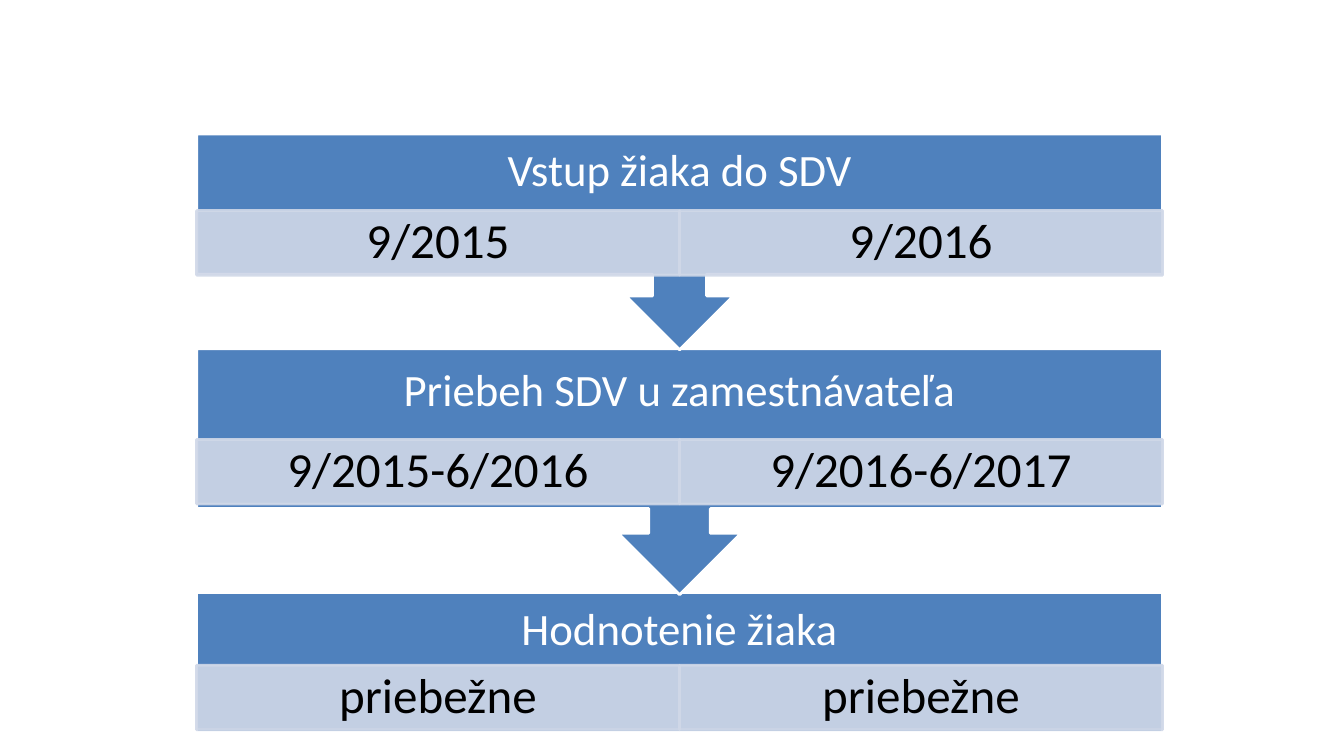
from lxml.etree import SubElement
from pptx import Presentation
from pptx.dml.color import RGBColor
from pptx.enum.shapes import MSO_SHAPE
from pptx.enum.text import MSO_ANCHOR, PP_ALIGN
from pptx.oxml.ns import qn
from pptx.util import Inches, Pt

COLORS = {"blue": "4F81BD", "pale": "D0D8E8", "white": "FFFFFF", "black": "000000"}
LEFT, WIDTH, CELL = 1.95, 9.58, 0.64

# Shape, top, height, heading height, cell top, heading, cell texts
STEPS = [
    (MSO_SHAPE.RECTANGLE, 5.88, 1.39, 0.75, 6.6,
     "Hodnotenie žiaka", ("priebežne", "priebežne")),
    (MSO_SHAPE.UP_ARROW_CALLOUT, 3.46, 2.44, 0.86, 4.36,
     "Priebeh SDV u zamestnávateľa", ("9/2015-6/2016", "9/2016-6/2017")),
    (MSO_SHAPE.UP_ARROW_CALLOUT, 1.33, 2.14, 0.75, 2.09,
     "Vstup žiaka do SDV", ("9/2015", "9/2016")),
]


class Board:
    font = "Calibri"
    head = {"size": 32, "color": "white", "side": 0.25, "edge": 0.25}
    body = {"size": 35, "color": "black", "side": 0.27, "edge": 0.05}

    def __init__(self, slide):
        self.slide = slide

    def paint(self, fill, name, alpha=None):
        fill.solid()
        fill.fore_color.rgb = RGBColor.from_string(COLORS[name])
        if alpha:
            for tone in fill._xPr.iter(qn("a:srgbClr")):
                SubElement(tone, qn("a:alpha"), val=str(alpha * 1000))

    def block(self, kind, box, fill, line, alpha=None):
        shape = self.slide.shapes.add_shape(kind, *map(Inches, box))
        shape.shadow.inherit = False
        self.paint(shape.line.fill, line, alpha)
        self.paint(shape.fill, fill, alpha)
        shape.line.width = Pt(2)
        return shape

    def text(self, shape, words, style):
        frame = shape.text_frame
        side, edge = Inches(style["side"]), Inches(style["edge"])
        form = {"word_wrap": True, "vertical_anchor": MSO_ANCHOR.MIDDLE,
                "margin_left": side, "margin_right": side,
                "margin_top": edge, "margin_bottom": edge}
        for key, value in form.items():
            setattr(frame, key, value)
        para = frame.paragraphs[0]
        para.alignment, para.line_spacing = PP_ALIGN.CENTER, 0.9
        run = para.add_run()
        run.text = words
        run.font.name, run.font.size = self.font, Pt(style["size"])
        run.font.color.rgb = RGBColor.from_string(COLORS[style["color"]])

    def label(self, box, words):
        self.text(self.slide.shapes.add_textbox(*map(Inches, box)), words, self.head)

    def cell(self, box, words):
        shape = self.block(MSO_SHAPE.RECTANGLE, box, "pale", "pale", 90)
        self.text(shape, words, self.body)


def main():
    deck = Presentation()
    deck.slide_width, deck.slide_height = Inches(13.33), Inches(7.5)
    board = Board(deck.slides.add_slide(deck.slide_layouts[6]))

    # Steps from the last to the first, so that arrows lie on top
    for kind, top, height, tall, row, title, texts in STEPS:
        shape = board.block(kind, (LEFT, top, WIDTH, height), "blue", "white")
        if kind == MSO_SHAPE.UP_ARROW_CALLOUT:
            shape.rotation = 180
        board.label((LEFT, top, WIDTH, tall), title)
        # Two equal cells below the heading
        half = WIDTH / len(texts)
        for col, words in enumerate(texts):
            board.cell((LEFT + col * half, row, half, CELL), words)

    deck.save("out.pptx")


if __name__ == "__main__":
    main()
